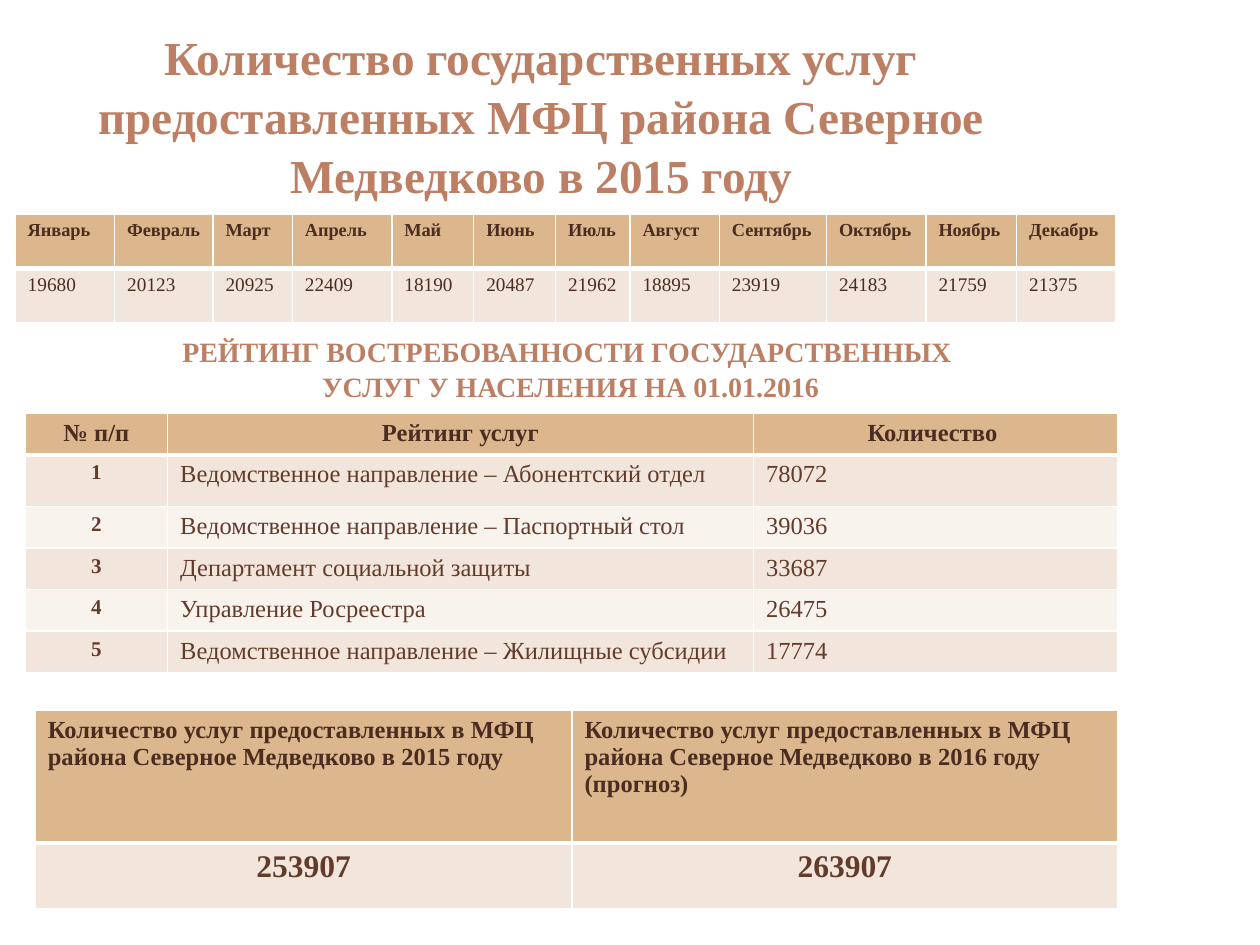
import lxml.etree
import pptx
import pptx.dml.color
import pptx.enum.text
import pptx.oxml.ns
import pptx.util

Inches = pptx.util.Inches
Pt = pptx.util.Pt
ALIGN = pptx.enum.text.PP_ALIGN
ANCHOR = pptx.enum.text.MSO_ANCHOR
qn = pptx.oxml.ns.qn

COLORS = {
    "accent": "BC7F64", "dark": "4A2C20", "body": "623B2A",
    "header": "DCB68D", "band": "F2E5DB", "light": "F9F3EE", "white": "FFFFFF",
}


def rgb(name):
    return pptx.dml.color.RGBColor.from_string(COLORS[name])


def apply(target, values):
    for attribute, value in values.items():
        setattr(target, attribute, value)


def add_line(parent, tag, color, width):
    line = lxml.etree.Element(qn(tag), w=str(Pt(width)))
    fill = lxml.etree.SubElement(line, qn("a:solidFill"))
    lxml.etree.SubElement(fill, qn("a:srgbClr"), val=COLORS[color])
    parent.append(line)


class ReportSlide:
    font_name = "Times New Roman"

    def __init__(self, presentation):
        self.slide = presentation.slides.add_slide(presentation.slide_layouts[5])
        self.slide.background.fill.solid()
        self.slide.background.fill.fore_color.rgb = rgb("white")

    def add_text(self, paragraph, text, size, color, bold, align, outlined=False):
        paragraph.alignment = align
        run = paragraph.add_run()
        run.text = text
        if outlined:
            add_line(run.font._element, "a:ln", "dark", 0.75)
        apply(run.font, {"name": self.font_name, "size": Pt(size), "bold": bold})
        run.font.color.rgb = rgb(color)

    def heading(self, shape, box, lines, size, anchor, wrap):
        apply(shape, dict(zip(("left", "top", "width", "height"), map(Inches, box))))
        frame = shape.text_frame
        apply(frame, {
            "margin_left": 0, "margin_right": 0, "margin_top": 0, "margin_bottom": 0,
            "vertical_anchor": anchor, "word_wrap": wrap,
            "auto_size": pptx.enum.text.MSO_AUTO_SIZE.NONE,
        })
        for index, line in enumerate(lines):
            paragraph = frame.add_paragraph() if index else frame.paragraphs[0]
            apply(paragraph, {"line_spacing": 1.04, "space_before": Pt(0)})
            self.add_text(paragraph, line, size, "accent", True, ALIGN.CENTER, True)

    def title(self, box, lines, size):
        self.heading(self.slide.shapes.title, box, lines, size, ANCHOR.TOP, True)

    def subtitle(self, box, lines, size):
        shape = self.slide.shapes.add_textbox(*map(Inches, box))
        self.heading(shape, box, lines, size, ANCHOR.BOTTOM, False)

    def table(self, left, top, widths, heights, rows, head, columns, right_margin=0.1):
        table = self.slide.shapes.add_table(
            len(rows), len(widths), Inches(left), Inches(top),
            Inches(sum(widths)), Inches(sum(heights))).table
        for column, width in zip(table.columns, widths):
            column.width = Inches(width)
        for number, (row, height) in enumerate(zip(rows, heights)):
            table.rows[number].height = Inches(height)
            fill = "header" if number == 0 else ("light", "band")[number % 2]
            for position, text in enumerate(row):
                cell = table.cell(number, position)
                cell.margin_right = Inches(right_margin)
                properties = cell._tc.get_or_add_tcPr()
                for side in "LRTB":
                    thick = number == 0 and side == "B"
                    add_line(properties, f"a:ln{side}", "white", 3 if thick else 1)
                cell.fill.solid()
                cell.fill.fore_color.rgb = rgb(fill)
                style = columns[position % len(columns)] if number else head
                self.add_text(cell.text_frame.paragraphs[0], text, **style)


def text_style(size, color="dark", bold=True, align=ALIGN.LEFT):
    return {"size": size, "color": color, "bold": bold, "align": align}


def main():
    presentation = pptx.Presentation()
    apply(presentation, {"slide_width": Inches(10), "slide_height": Inches(7.5)})
    report = ReportSlide(presentation)

    report.title((0.71, 0.21, 7.17, 1.42), [
        "Количество государственных услуг предоставленных МФЦ района "
        "Северное Медведково в 2015 году"], 27)

    months = {
        "Январь": 19680, "Февраль": 20123, "Март": 20925, "Апрель": 22409,
        "Май": 18190, "Июнь": 20487, "Июль": 21962, "Август": 18895,
        "Сентябрь": 23919, "Октябрь": 24183, "Ноябрь": 21759, "Декабрь": 21375,
    }
    report.table(
        0.12, 1.7,
        [0.79, 0.78, 0.63, 0.79, 0.65, 0.65, 0.59, 0.71, 0.85, 0.79, 0.72, 0.79],
        [0.43] * 2, [list(months), [str(count) for count in months.values()]],
        text_style(10.5), [text_style(11, bold=False)], right_margin=0.05)

    services = [
        ("Ведомственное направление – Абонентский отдел", 78072),
        ("Ведомственное направление – Паспортный стол", 39036),
        ("Департамент социальной защиты", 33687),
        ("Управление Росреестра", 26475),
        ("Ведомственное направление – Жилищные субсидии", 17774),
    ]
    rating = [("№ п/п", "Рейтинг услуг", "Количество ")]
    rating += [(str(place), name, str(count))
               for place, (name, count) in enumerate(services, 1)]
    plain = text_style(14, "body", False)
    report.table(
        0.2, 3.28, [1.13, 4.65, 2.89], [0.33, 0.41] + [0.33] * 4, rating,
        text_style(14, align=ALIGN.CENTER),
        [text_style(12, "body", align=ALIGN.CENTER), plain, plain])

    report.subtitle((0.2, 2.57, 8.66, 0.63), [
        "РЕЙТИНГ ВОСТРЕБОВАННОСТИ ГОСУДАРСТВЕННЫХ ",
        "УСЛУГ У НАСЕЛЕНИЯ НА 01.01.2016"], 16)

    total = "Количество услуг предоставленных в МФЦ района Северное Медведково в "
    report.table(
        0.28, 5.64, [4.26, 4.33], [1.05, 0.52],
        [(total + "2015 году", total + "2016 году (прогноз)"), ("253907", "263907")],
        text_style(14), [text_style(18, "body", align=ALIGN.CENTER)])

    presentation.save("out.pptx")


if __name__ == "__main__":
    main()
